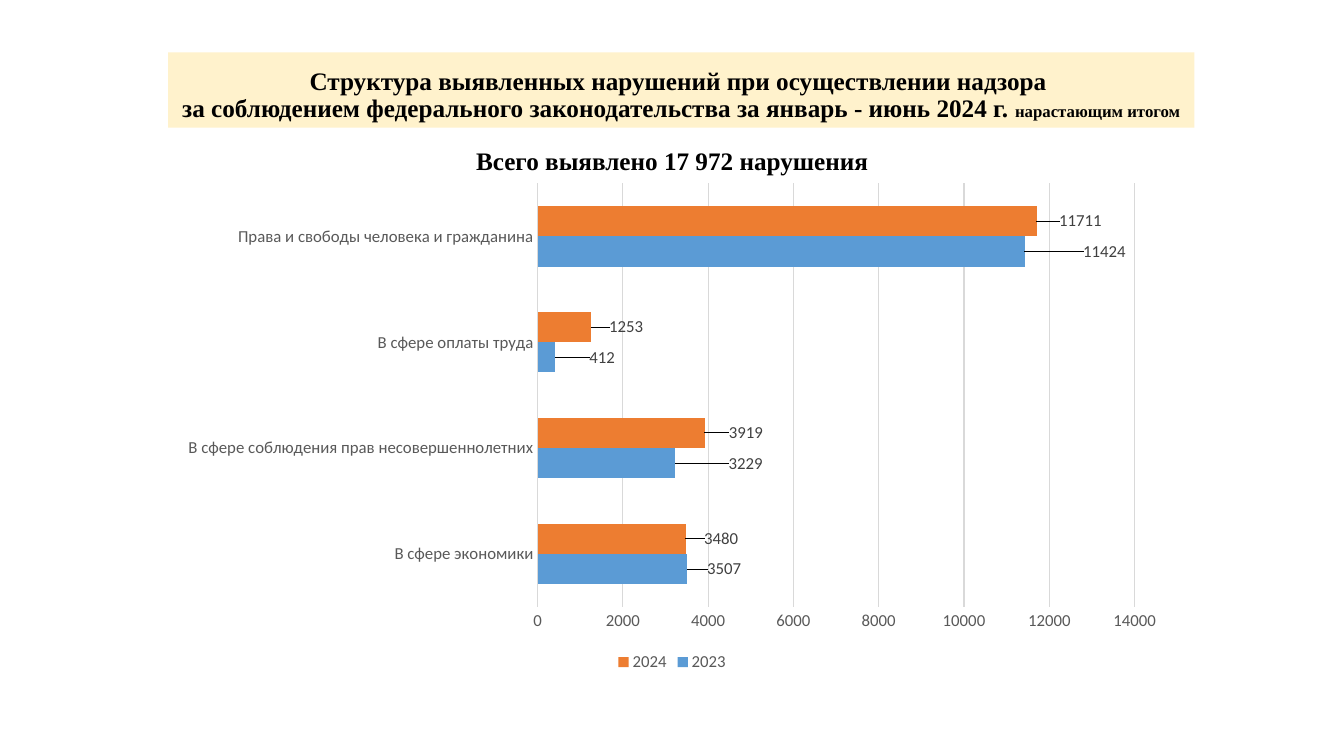
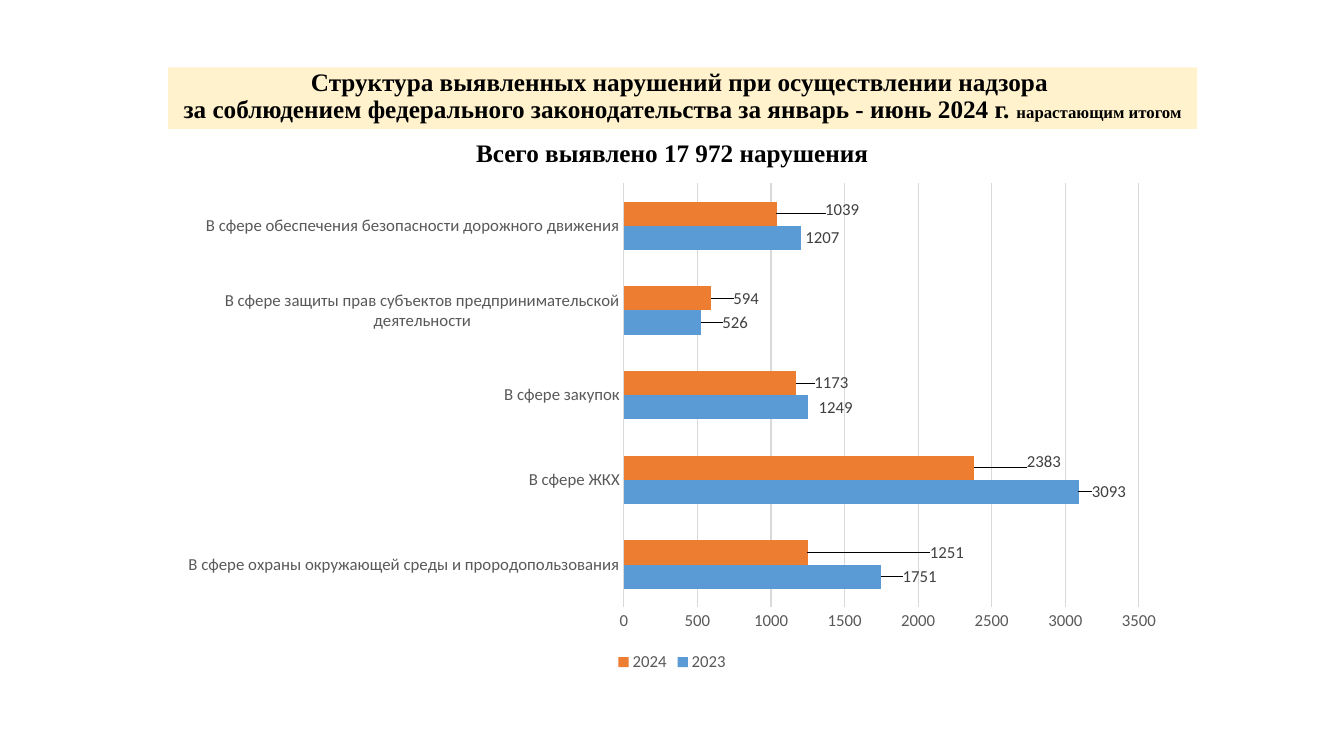
from lxml import etree
from pptx import Presentation
from pptx import util as u
from pptx.chart.data import CategoryChartData
from pptx.dml.color import RGBColor
from pptx.enum import chart as ch, shapes, text
from pptx.oxml.ns import qn

# Content shared by both slides
TITLE = ("Структура выявленных нарушений при осуществлении надзора \v"
         "за соблюдением федерального законодательства за январь - июнь 2024 г. ")
TITLE_NOTE = "нарастающим итогом"
TOTAL = "Всего выявлено 17 972 нарушения"
SERIES = (("2023", "5B9BD5"), ("2024", "ED7D31"))

# Rows: category, values by series, label shifts (x, y) by series
# in thousandths of the chart size
SLIDES = [
    {"band": (1.32, 25.86, 1.9), "total_top": 3.68, "axis": (14000, 2000), "rows": [
        ("В сфере экономики", (3507, 3480), ((16, 0), (14, 0))),
        ("В сфере соблюдения прав несовершеннолетних", (3229, 3919), ((49, 0), (20, 0))),
        ("В сфере оплаты труда", (412, 1253), ((30, 0), (14, 0))),
        ("Права и свободы человека и гражданина", (11424, 11711), ((54, 0), (18, 0))),
    ]},
    {"band": (1.7, 25.93, 1.55), "total_top": 3.48, "axis": (3500, 500), "rows": [
        ("В сфере охраны окружающей среды и прородопользования",
         (1751, 1251), ((17, 0), (117, 0))),
        ("В сфере ЖКХ", (3093, 2383), ((9, 0), (48, -12))),
        ("В сфере закупок", (1249, 1173), ((7, 0), (14, 0))),
        ("В сфере защиты прав субъектов предпринимательской деятельности",
         (526, 594), ((17, 0), (18, 0))),
        ("В сфере обеспечения безопасности дорожного движения",
         (1207, 1039), ((0, 0), (44, -8))),
    ]},
]

# Shared style
LEFT, WIDTH = u.Cm(4.24), u.Cm(25.4)
CHART_TOP, CHART_HEIGHT = u.Cm(4.37), u.Cm(12.67)
BAND, BLACK, AXIS_TEXT, LABEL_TEXT, GRID = "FFF2CC", "000000", "595959", "404040", "D9D9D9"


def color(value):
    return RGBColor.from_string(value)


def set_font(font, name, size, hex_color, bold=False):
    font.name, font.size, font.bold = name, u.Pt(size), bold
    font.color.rgb = color(hex_color)


def write_heading(shape, words, spacing, anchor):
    frame = shape.text_frame
    frame.word_wrap = True
    frame.vertical_anchor = anchor
    para = frame.paragraphs[0]
    para.text = words
    para.alignment = text.PP_ALIGN.CENTER
    para.line_spacing = spacing
    set_font(para.font, "Times New Roman", 18, BLACK, True)
    return para


def add_title(page, top, width, height):
    band = page.shapes.add_shape(shapes.MSO_SHAPE.RECTANGLE, LEFT, u.Cm(top),
                                 u.Cm(width), u.Cm(height))
    band.shadow.inherit = False
    band.fill.solid()
    band.fill.fore_color.rgb = color(BAND)
    band.line.fill.background()
    para = write_heading(band, TITLE, 0.9, text.MSO_ANCHOR.BOTTOM)
    span = para.add_run()
    span.text = TITLE_NOTE
    span.font.size = u.Pt(12)


def add_total(page, top):
    box = page.shapes.add_textbox(LEFT, u.Cm(top), WIDTH, u.Cm(0.91))
    write_heading(box, TOTAL, 0.8, text.MSO_ANCHOR.TOP)


def shift_label(label, x, y):
    layout = etree.Element(qn("c:layout"))
    manual = etree.SubElement(layout, qn("c:manualLayout"))
    for axis, shift in (("x", x), ("y", y)):
        etree.SubElement(manual, qn("c:" + axis)).set("val", str(shift / 1000))
    label.find(qn("c:idx")).addnext(layout)


def add_bars(page, rows, maximum, step):
    names, values, shifts = zip(*rows)
    data = CategoryChartData()
    data.categories = names
    for (year, _), numbers in zip(SERIES, zip(*values)):
        data.add_series(year, numbers)
    chart = page.shapes.add_chart(ch.XL_CHART_TYPE.BAR_CLUSTERED, LEFT, CHART_TOP,
                                  WIDTH, CHART_HEIGHT, data).chart
    set_font(chart.font, "Calibri", 10, BLACK)
    chart.has_title = False
    chart.has_legend = True
    chart.legend.position = ch.XL_LEGEND_POSITION.BOTTOM
    chart.legend.include_in_layout = False
    set_font(chart.legend.font, "Calibri", 12, AXIS_TEXT)

    # Axes
    for axis in (chart.category_axis, chart.value_axis):
        axis.major_tick_mark = axis.minor_tick_mark = ch.XL_TICK_MARK.NONE
        axis.format.line.fill.background()
        set_font(axis.tick_labels.font, "Calibri", 12, AXIS_TEXT)
    scale = chart.value_axis
    scale.minimum_scale, scale.maximum_scale, scale.major_unit = 0, maximum, step
    scale.has_major_gridlines = True
    scale.major_gridlines.format.line.color.rgb = color(GRID)
    scale.major_gridlines.format.line.width = u.Pt(0.75)

    # Bars and their labels
    plot = chart.plots[0]
    plot.gap_width = 150
    plot.vary_by_categories = False
    for series, (_, fill) in zip(plot.series, SERIES):
        series.format.fill.solid()
        series.format.fill.fore_color.rgb = color(fill)
        series.data_labels.show_value = True
        set_font(series.data_labels.font, "Calibri", 12, LABEL_TEXT)
        for index in range(len(rows)):
            label = series.points[index].data_label
            set_font(label.font, "Calibri", 12, LABEL_TEXT)
            label.position = ch.XL_LABEL_POSITION.OUTSIDE_END
    label_shifts = [shift for column in zip(*shifts) for shift in column]
    for label, shift in zip(list(chart.element.iter(qn("c:dLbl"))), label_shifts):
        shift_label(label, *shift)


def main():
    deck = Presentation()
    deck.slide_width, deck.slide_height = u.Cm(33.87), u.Cm(19.05)
    for content in SLIDES:
        page = deck.slides.add_slide(deck.slide_layouts[6])
        add_title(page, *content["band"])
        add_total(page, content["total_top"])
        add_bars(page, content["rows"], *content["axis"])
    deck.save("out.pptx")


if __name__ == "__main__":
    main()
